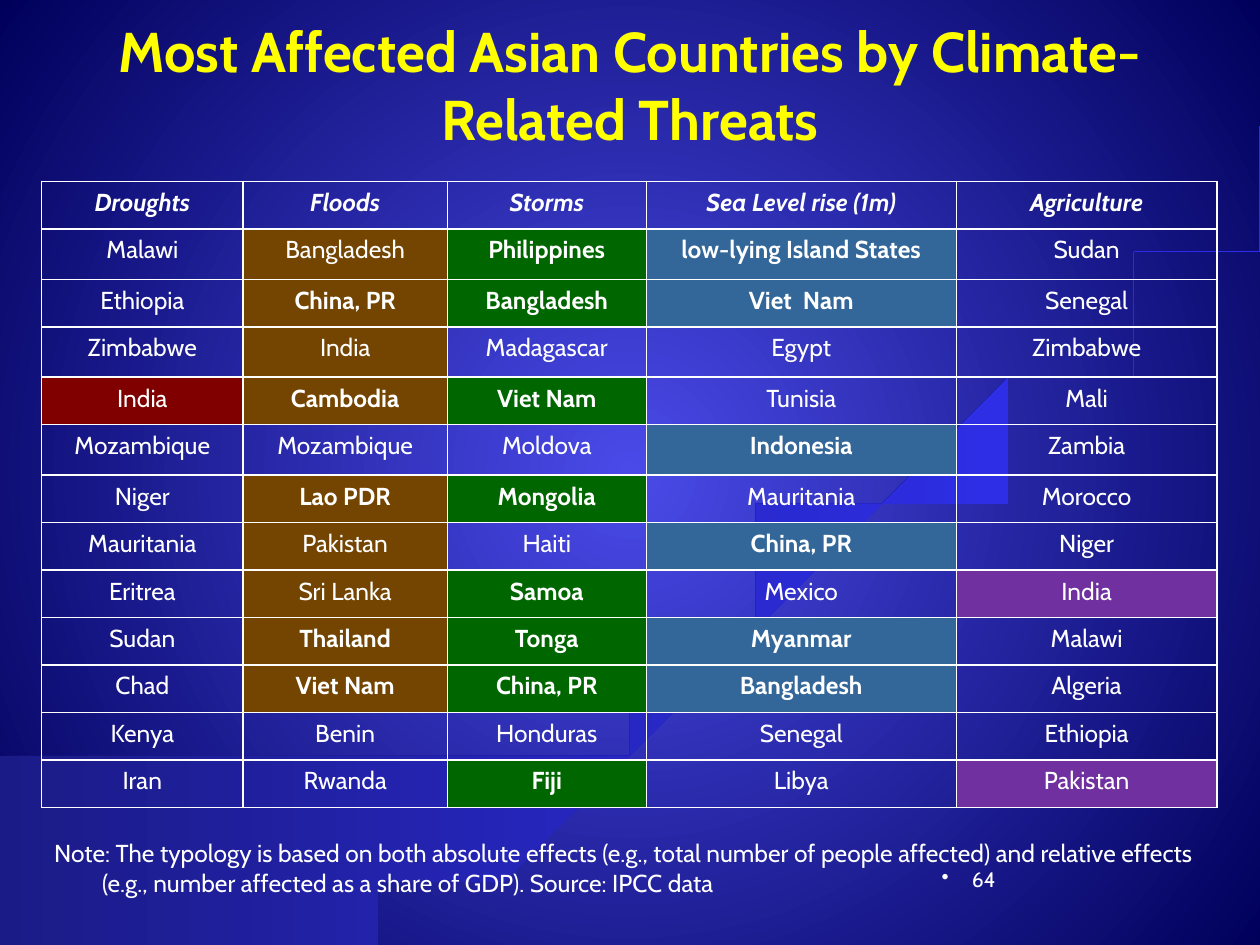
from lxml import etree
from pptx import Presentation
from pptx.dml.color import RGBColor
from pptx.enum.text import MSO_ANCHOR, PP_ALIGN
from pptx.oxml import parse_xml
from pptx.oxml.ns import nsdecls, qn
from pptx.util import Inches, Pt

FONT = "Cabin"
WHITE = RGBColor(0xFF, 0xFF, 0xFF)
YELLOW = RGBColor(0xFF, 0xFF, 0x00)
GLOW, NAVY = RGBColor(0x4A, 0x4A, 0xE9), RGBColor(0x00, 0x00, 0x5B)
SWOOSH_DARK, SWOOSH_BRIGHT = RGBColor(0x1B, 0x1B, 0x87), RGBColor(0x33, 0x33, 0xFF)

TITLE = "Most Affected Asian Countries by Climate-Related Threats"
NOTE = ("Note: The typology is based on both absolute effects (e.g., total number of "
        "people affected) and relative effects (e.g., number affected as a share of GDP). "
        "Source: IPCC data")
PAGE_NUMBER = "64"

# Heading, width, highlight colour, countries: "+" is highlighted, "*" is highlighted and bold
THREATS = [
    ("Droughts", 1.6, RGBColor(0x80, 0x00, 0x00),
     ["Malawi", "Ethiopia", "Zimbabwe", "+India", "Mozambique", "Niger", "Mauritania",
      "Eritrea", "Sudan", "Chad", "Kenya", "Iran"]),
    ("Floods", 1.62, RGBColor(0x74, 0x45, 0x00),
     ["+Bangladesh", "*China, PR", "+India", "*Cambodia", "Mozambique", "*Lao PDR",
      "+Pakistan", "+Sri Lanka", "*Thailand", "*Viet Nam", "Benin", "Rwanda"]),
    ("Storms", 1.58, RGBColor(0x00, 0x66, 0x00),
     ["*Philippines", "*Bangladesh", "Madagascar", "*Viet Nam", "Moldova", "*Mongolia",
      "Haiti", "*Samoa", "*Tonga", "*China, PR", "Honduras", "*Fiji"]),
    ("Sea Level rise (1m)", 2.46, RGBColor(0x33, 0x66, 0x99),
     ["*low-lying Island States", "*Viet  Nam", "Egypt", "Tunisia", "*Indonesia",
      "Mauritania", "*China, PR", "Mexico", "*Myanmar", "*Bangladesh", "Senegal", "Libya"]),
    ("Agriculture", 2.07, RGBColor(0x70, 0x30, 0xA0),
     ["Sudan", "Senegal", "Zimbabwe", "Mali", "Zambia", "Morocco", "Niger", "+India",
      "Malawi", "Algeria", "Ethiopia", "+Pakistan"]),
]
GRID_HEIGHT, TALL_ROW, NOTE_HEIGHT = 4.97, 0.4, 0.94
TALL_ROWS = {1, 3, 5}

SWOOSH_START = (-0.03, 7.6)
SWOOSH_CURVES = [
    ((0.55, 7.53), (1.76, 8.17), (3.45, 7.12)),
    ((5.13, 6.08), (9.89, 1.6), (10.08, 1.33)),
    ((10.28, 1.07), (6.29, 4.83), (4.61, 5.53)),
    ((2.93, 6.23), (0.73, 5.53), (-0.01, 5.54)),
]
SWOOSH_END = (-0.03, 5.64)


def set_gradient(fill, first, last):
    fill.gradient()
    for stop, color, position in zip(fill.gradient_stops, (first, last), (0, 1)):
        stop.color.rgb = color
        stop.position = position


def bezier_points(start, curves, steps=30):
    points = []
    for first, second, end in curves:
        for step in range(1, steps + 1):
            t = step / steps
            u = 1 - t
            points.append(tuple(
                u**3 * a + 3 * u**2 * t * b + 3 * u * t**2 * c + t**3 * d
                for a, b, c, d in zip(start, first, second, end)))
        start = end
    return points


def add_text(paragraph, text, size, color=WHITE, bold=False, italic=False):
    run = paragraph.add_run()
    run.text = text
    font = run.font
    font.name, font.size, font.bold, font.italic = FONT, Pt(size), bold, italic
    font.color.rgb = color


def add_box(slide, left, top, width, height, align):
    """Add a wrapping text box and return its frame and first paragraph."""
    box = slide.shapes.add_textbox(*map(Inches, (left, top, width, height)))
    frame = box.text_frame
    frame.word_wrap = True
    paragraph = frame.paragraphs[0]
    paragraph.alignment = align
    return frame, paragraph


def set_indent(paragraph, hanging):
    properties = paragraph._p.get_or_add_pPr()
    properties.set("marL", str(Inches(hanging)))
    properties.set("indent", str(-Inches(hanging)))
    return properties


def set_borders(cell, visible_sides):
    properties = cell._tc.get_or_add_tcPr()
    for side in "LRTB":
        line = ('<a:solidFill><a:srgbClr val="FFFFFF"/></a:solidFill>'
                if side in visible_sides else "<a:noFill/>")
        properties.append(parse_xml(
            f'<a:ln{side} {nsdecls("a")} w="{Pt(1)}">{line}</a:ln{side}>'))


def fill_cell(cell, text, color=None, align=PP_ALIGN.CENTER, borders="LRTB", **style):
    set_borders(cell, borders)
    if color is None:
        cell.fill.background()
    else:
        cell.fill.solid()
        cell.fill.fore_color.rgb = color
    paragraph = cell.text_frame.paragraphs[0]
    paragraph.alignment = align
    set_indent(paragraph, 0.38)
    add_text(paragraph, text, 14, **style)


presentation = Presentation()
presentation.slide_width, presentation.slide_height = Inches(10), Inches(7.5)
slide = presentation.slides.add_slide(presentation.slide_layouts[6])

# Radial background
background = slide.background.fill
set_gradient(background, GLOW, NAVY)
gradient = slide.background._cSld.find(".//" + qn("a:gradFill"))
gradient.replace(gradient.find(qn("a:lin")), parse_xml(
    f'<a:path {nsdecls("a")} path="circle">'
    '<a:fillToRect l="50000" t="50000" r="50000" b="50000"/></a:path>'))

# Swoosh
builder = slide.shapes.build_freeform(*SWOOSH_START, scale=Inches(1))
builder.add_line_segments(bezier_points(SWOOSH_START, SWOOSH_CURVES) + [SWOOSH_END])
swoosh = builder.convert_to_shape()
swoosh.shadow.inherit = False
set_gradient(swoosh.fill, SWOOSH_DARK, SWOOSH_BRIGHT)
swoosh.fill.gradient_angle = 0
swoosh.line.fill.background()

# Table
row_count = len(THREATS[0][3]) + 2
note_row = row_count - 1
plain_row = (GRID_HEIGHT - TALL_ROW * len(TALL_ROWS)) / (note_row - len(TALL_ROWS))
table = slide.shapes.add_table(
    row_count, len(THREATS), Inches(0.33), Inches(1.44),
    Inches(9.33), Inches(GRID_HEIGHT + NOTE_HEIGHT)).table
table.first_row = table.horz_banding = False
for index, row in enumerate(table.rows):
    row.height = Inches(TALL_ROW if index in TALL_ROWS else plain_row)
table.rows[note_row].height = Inches(NOTE_HEIGHT)

for column, (heading, width, color, countries) in enumerate(THREATS):
    table.columns[column].width = Inches(width)
    fill_cell(table.cell(0, column), heading, bold=True, italic=True)
    for row, country in enumerate(countries, 1):
        fill_cell(table.cell(row, column), country.lstrip("+*"),
                  color if country[0] in "+*" else None, bold=country[0] == "*")

note = table.cell(note_row, 0)
note.merge(table.cell(note_row, len(THREATS) - 1))
note.margin_top = Inches(0.25)
fill_cell(note, NOTE, align=PP_ALIGN.LEFT, borders="T")
for column in range(1, len(THREATS)):
    set_borders(table.cell(note_row, column), "T")
    table.cell(note_row, column).fill.background()

# Title and page number
frame, paragraph = add_box(slide, 0.75, 0.33, 8.5, 0.92, PP_ALIGN.CENTER)
frame.vertical_anchor = MSO_ANCHOR.BOTTOM
add_text(paragraph, TITLE, 32, YELLOW, bold=True)

frame, paragraph = add_box(slide, 6.75, 6.83, 1.25, 0.5, PP_ALIGN.RIGHT)
bullet = etree.SubElement(set_indent(paragraph, 0.24), qn("a:buChar"))
bullet.set("char", "•")
add_text(paragraph, PAGE_NUMBER, 12)

presentation.save("out.pptx")
